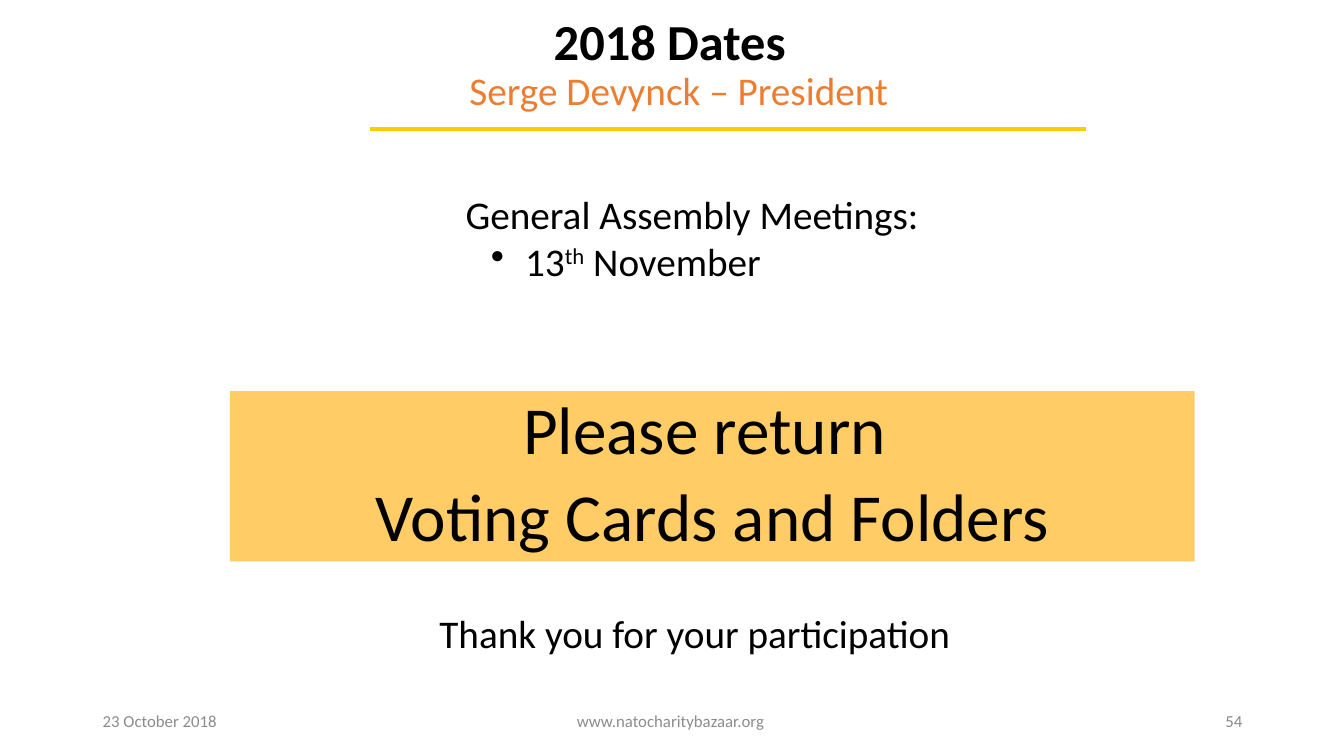
import pptx
import pptx.dml.color
import pptx.enum.shapes
import pptx.enum.text
import pptx.oxml
import pptx.oxml.ns
import pptx.util
from dataclasses import dataclass

PX = 9144
ALIGN = pptx.enum.text.PP_ALIGN
ANCHOR = pptx.enum.text.MSO_ANCHOR


@dataclass(frozen=True)
class Theme:
    font: str = "Calibri"
    ink: str = "000000"
    accent: str = "ED7D31"
    rule: str = "FFCC00"
    banner: str = "FFCC66"
    date_grey: str = "8C8C8C"
    number_grey: str = "898989"
    title: int = 36
    body: int = 28
    shout: int = 48
    small: int = 12
    gap: int = 20


THEME = Theme()


def px(*lengths):
    return [pptx.util.Emu(length * PX) for length in lengths]


def color(value):
    return pptx.dml.color.RGBColor.from_string(value)


def add_bullet(para, margin, hanging):
    properties = para._p.get_or_add_pPr()
    properties.set("marL", str(margin * PX))
    properties.set("indent", str(-hanging * PX))
    bullet = pptx.oxml.ns.qn("a:buChar")
    properties.append(properties.makeelement(bullet, {"char": "•"}))


def write(para, text, size=THEME.body, ink=THEME.ink, bold=False,
          align=ALIGN.LEFT, spacing=1.0, before=0, raised=False):
    para.alignment = align
    para.line_spacing = spacing
    para.space_before = pptx.util.Pt(before)
    span = para.add_run()
    span.text = text
    span.font.name = THEME.font
    span.font.size = pptx.util.Pt(size)
    span.font.bold = bold
    span.font.color.rgb = color(ink)
    if raised:
        span._r.get_or_add_rPr().set("baseline", "30000")


def prepare(shape, anchor=ANCHOR.TOP):
    frame = shape.text_frame
    frame.word_wrap = True
    frame.auto_size = pptx.enum.text.MSO_AUTO_SIZE.NONE
    frame.vertical_anchor = anchor
    return frame


def add_box(page, box, anchor=ANCHOR.TOP):
    return prepare(page.shapes.add_textbox(*px(*box)), anchor)


def add_heading(page, box):
    left, top, width, height = box
    title = page.shapes.title
    title.left, title.top, title.width, title.height = px(*box)
    frame = prepare(title, ANCHOR.BOTTOM)
    centred = dict(align=ALIGN.CENTER, spacing=0.9)
    write(frame.paragraphs[0], "2018 Dates ", size=THEME.title, bold=True, **centred)
    para = frame.add_paragraph()
    write(para, " ", size=THEME.gap, ink=THEME.accent, **centred)
    write(para, "Serge Devynck – President", ink=THEME.accent, **centred)

    rule_left, rule_top = left + 197, top + height + 10
    rule = page.shapes.add_connector(
        pptx.enum.shapes.MSO_CONNECTOR.STRAIGHT,
        *px(rule_left, rule_top, rule_left + 710, rule_top))
    rule.line.color.rgb = color(THEME.rule)
    rule.line.width = pptx.util.Pt(3)
    properties = rule._element.spPr
    properties.append(properties.makeelement(pptx.oxml.ns.qn("a:effectLst"), {}))


def add_meetings(page, box):
    frame = add_box(page, box)
    write(frame.paragraphs[0], "General Assembly Meetings:")
    para = frame.add_paragraph()
    add_bullet(para, margin=59, hanging=34)
    write(para, "13")
    write(para, "th", raised=True)
    write(para, " November")


def add_banner(page, box):
    banner = page.shapes.add_shape(
        pptx.enum.shapes.MSO_SHAPE.RECTANGLE, *px(*box))
    banner.shadow.inherit = False
    banner.fill.solid()
    banner.fill.fore_color.rgb = color(THEME.banner)
    banner.line.fill.background()
    frame = prepare(banner, ANCHOR.MIDDLE)
    centred = dict(size=THEME.shout, align=ALIGN.CENTER, spacing=0.9)
    write(frame.paragraphs[0], "Please return ", **centred)
    write(frame.add_paragraph(), "Voting Cards and Folders", before=10, **centred)


def add_thanks(page, box):
    write(add_box(page, box).paragraphs[0], "Thank you for your participation")


def add_footer(page, box):
    left, top, width, height = box
    parts = [
        (0, 300, "23 October 2018", ALIGN.LEFT, THEME.date_grey),
        (350, 450, "www.natocharitybazaar.org ", ALIGN.CENTER, THEME.date_grey),
        (width - 300, 300, "54", ALIGN.RIGHT, THEME.number_grey),
    ]
    for offset, part_width, text, align, ink in parts:
        frame = add_box(page, (left + offset, top, part_width, height), ANCHOR.MIDDLE)
        write(frame.paragraphs[0], text, size=THEME.small, ink=ink, align=align)


def main():
    deck = pptx.Presentation()
    deck.slide_width, deck.slide_height = px(1333, 750)
    page = deck.slides.add_slide(deck.slide_layouts.get_by_name("Title Only"))
    add_heading(page, (170, 23, 1000, 95))
    add_meetings(page, (452, 184, 562, 212))
    add_banner(page, (228, 388, 957, 169))
    add_thanks(page, (426, 600, 641, 57))
    add_footer(page, (92, 695, 1150, 40))
    deck.save("out.pptx")


if __name__ == "__main__":
    main()
